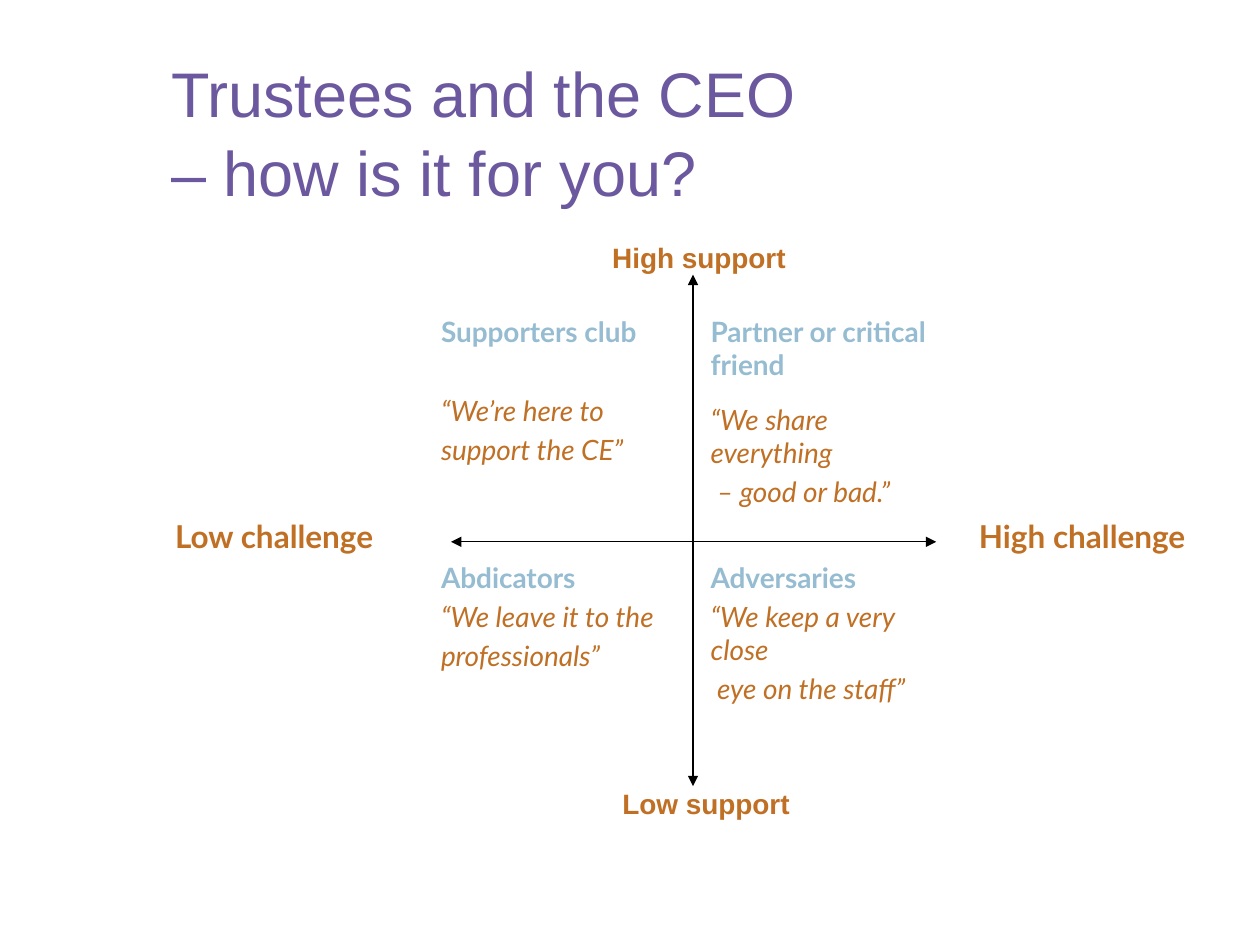
from pptx import Presentation
from pptx.dml.color import RGBColor
from pptx.enum import shapes, text
from pptx.oxml import parse_xml
from pptx.oxml.ns import nsdecls
from pptx.util import Inches, Pt

PURPLE, ORANGE, BLUE, BLACK = "6B589F", "C07025", "96BCD2", "000000"

HEADING = {"name": "Lato", "size": Pt(16), "bold": True, "italic": False}
QUOTE = {"name": "Lato", "size": Pt(16), "bold": False, "italic": True}
CHALLENGE = {"name": "Lato", "size": Pt(18), "bold": True}
SUPPORT = {"name": "Arial", "size": Pt(16), "bold": True}
TITLE = {"name": "Arial", "size": Pt(36), "bold": False}

COLUMN_WIDTHS = (2.11, 2.14, 2.13, 2.12)
ROW_HEIGHTS = (1.68, 1.89)
LINE_GAP = 3.2

# (row, column, heading, points between heading and quote, quote lines)
QUADRANTS = (
    (0, 1, "Supporters club", 26, ("“We’re here to", "support the CE”")),
    (0, 2, "Partner or critical friend", 12,
     ("“We share everything", " – good or bad.”")),
    (1, 1, "Abdicators", LINE_GAP, ("“We leave it to the", "professionals”")),
    (1, 2, "Adversaries", LINE_GAP,
     ("“We keep a very close", " eye on the staff”")),
)


def rgb(value):
    return RGBColor.from_string(value)


def write(paragraph, wording, style, color, space_before=0):
    paragraph.text = wording
    paragraph.alignment = text.PP_ALIGN.LEFT
    paragraph.space_before = Pt(space_before)
    for attribute, value in style.items():
        setattr(paragraph.font, attribute, value)
    paragraph.font.color.rgb = rgb(color)


def set_title(slide, wording):
    title = slide.shapes.title
    title.left, title.top = Inches(1.26), Inches(0.23)
    title.width, title.height = Inches(8.52), Inches(1.6)
    title.text_frame.vertical_anchor = text.MSO_ANCHOR.MIDDLE
    heading = title.text_frame.paragraphs[0]
    write(heading, wording, TITLE, PURPLE)
    heading.line_spacing = 1.05


def fill_quadrant(cell, heading, gap, quote):
    frame = cell.text_frame
    write(frame.paragraphs[0], heading, HEADING, BLUE)
    for index, line in enumerate(quote):
        write(frame.add_paragraph(), line, QUOTE, ORANGE,
              LINE_GAP if index else gap)


def fill_challenge(grid, column, wording):
    """Merge an outer column and centre its label on the horizontal axis."""
    cell = grid.cell(0, column)
    cell.merge(grid.cell(1, column))
    cell.vertical_anchor = text.MSO_ANCHOR.MIDDLE
    cell.margin_top = Inches(0.1)
    write(cell.text_frame.paragraphs[0], wording, CHALLENGE, ORANGE)


def add_matrix(slide):
    grid = slide.shapes.add_table(
        len(ROW_HEIGHTS), len(COLUMN_WIDTHS), Inches(1.29), Inches(2.45),
        Inches(sum(COLUMN_WIDTHS)), Inches(sum(ROW_HEIGHTS))).table
    grid.first_row = grid.horz_banding = False
    for column, width in zip(grid.columns, COLUMN_WIDTHS):
        column.width = Inches(width)
    for row, height in zip(grid.rows, ROW_HEIGHTS):
        row.height = Inches(height)
    for cell in grid.iter_cells():
        cell.fill.background()

    fill_challenge(grid, 0, "Low challenge")
    fill_challenge(grid, 3, "High challenge")
    for row, column, heading, gap, quote in QUADRANTS:
        cell = grid.cell(row, column)
        cell.margin_top = Inches(0.32 if row else 0.05)
        fill_quadrant(cell, heading, gap, quote)


def add_support_label(slide, wording, left, top, width):
    label = slide.shapes.add_textbox(
        Inches(left), Inches(top), Inches(width), Inches(0.37))
    label.text_frame.word_wrap = True
    write(label.text_frame.paragraphs[0], wording, SUPPORT, ORANGE)


def add_axis(slide, *ends):
    """Draw a line from x1, y1 to x2, y2 with an arrowhead at both ends."""
    axis = slide.shapes.add_connector(
        shapes.MSO_CONNECTOR.STRAIGHT, *map(Inches, ends))
    axis.line.color.rgb = rgb(BLACK)
    axis.line.width = Pt(0.75)
    outline = axis.line._get_or_add_ln()
    for end in ("headEnd", "tailEnd"):
        outline.append(parse_xml(f'<a:{end} {nsdecls("a")} type="triangle"/>'))
    outline.addnext(parse_xml(f'<a:effectLst {nsdecls("a")}/>'))


def main():
    deck = Presentation()
    deck.slide_width, deck.slide_height = Inches(10), Inches(7.5)
    slide = deck.slides.add_slide(deck.slide_layouts.get_by_name("Title Only"))

    set_title(slide, "Trustees and the CEO\v– how is it for you?")
    add_matrix(slide)
    add_support_label(slide, "High support", 4.76, 1.86, 2.05)
    add_support_label(slide, "Low support", 4.84, 6.19, 1.81)
    add_axis(slide, 5.5, 2.18, 5.5, 6.24)
    add_axis(slide, 7.43, 4.3, 3.58, 4.3)

    deck.save("out.pptx")


if __name__ == "__main__":
    main()
